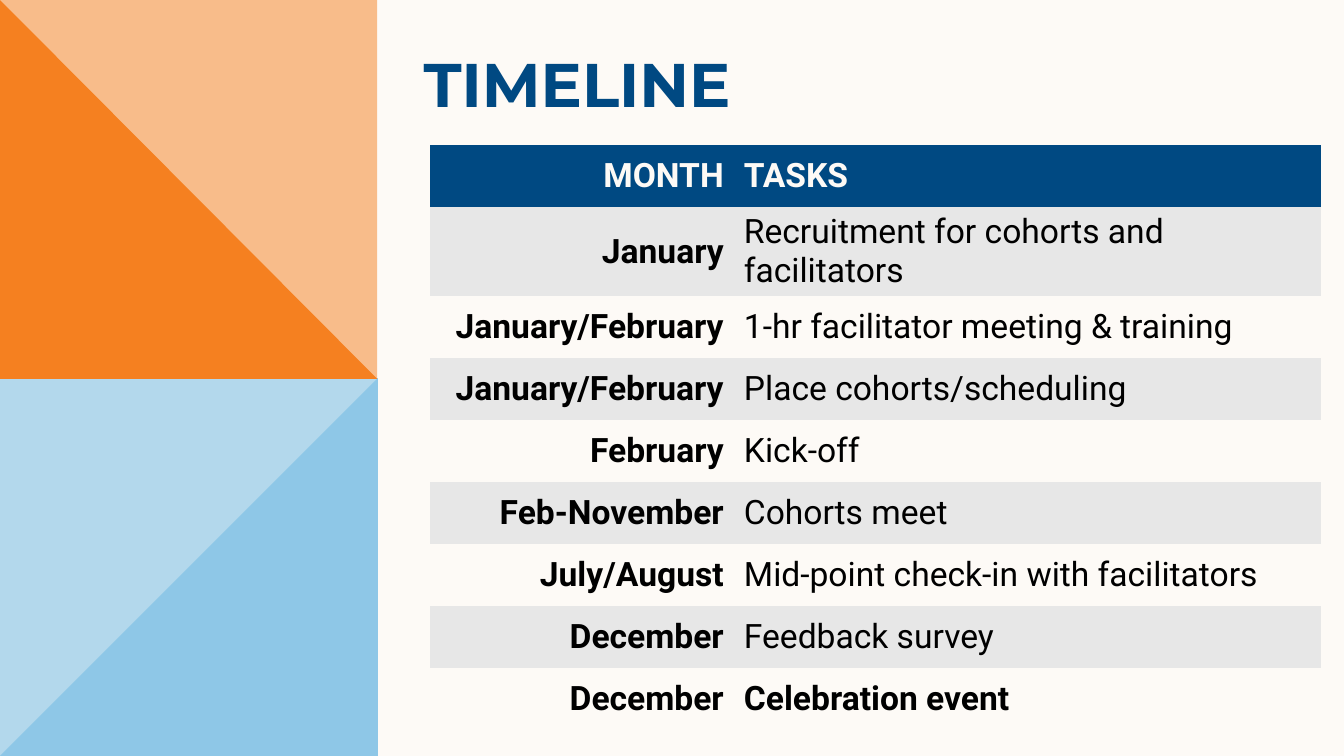
"""Build the programme timeline slide with its triangle side panel and task table."""
import dataclasses

import pptx
import pptx.dml.color
import pptx.enum.text
import pptx.oxml
import pptx.oxml.ns
import pptx.util

Pt = pptx.util.Pt
ALIGN = pptx.enum.text.PP_ALIGN
MIDDLE = pptx.enum.text.MSO_ANCHOR.MIDDLE


@dataclasses.dataclass(frozen=True)
class Theme:
    cream: str = "FDFAF6"
    navy: str = "004982"
    orange: str = "F58020"
    sky: str = "6BB8E3"
    band: str = "E7E7E7"
    black: str = "000000"
    title_font: str = "Montserrat"
    body_font: str = "Roboto"
    title_size: float = 44
    body_size: float = 24


class TimelineSlide:
    def __init__(self, deck, theme):
        self.theme = theme
        self.slide = deck.slides.add_slide(deck.slide_layouts[5])
        self.paint(self.slide.background.fill, theme.cream)

    def paint(self, fill, color, opacity=100):
        fill.solid()
        fill.fore_color.rgb = pptx.dml.color.RGBColor.from_string(color)
        if opacity < 100:
            tint = fill._xPr.find(".//" + pptx.oxml.ns.qn("a:srgbClr"))
            tint.append(pptx.oxml.parse_xml(
                f'<a:alpha {pptx.oxml.ns.nsdecls("a")} val="{opacity * 1000}"/>'))

    def label(self, frame, text, color, align=ALIGN.LEFT, **font_format):
        paragraph = frame.paragraphs[0]
        paragraph.alignment = align
        run = paragraph.add_run()
        run.text = text
        for name, value in font_format.items():
            setattr(run.font, name, value)
        run.font.color.rgb = pptx.dml.color.RGBColor.from_string(color)

    def title(self, text, left, top, width, height):
        heading = self.slide.shapes.title
        placement = {"left": left, "top": top, "width": width, "height": height}
        for name, value in placement.items():
            setattr(heading, name, Pt(value))
        frame = heading.text_frame
        frame_format = {"vertical_anchor": MIDDLE, "word_wrap": True,
                        "auto_size": pptx.enum.text.MSO_AUTO_SIZE.NONE}
        for name, value in frame_format.items():
            setattr(frame, name, value)
        self.label(frame, text, self.theme.navy, bold=True,
                   name=self.theme.title_font, size=Pt(self.theme.title_size))

    def polygon(self, corners, color, opacity=100):
        start, *others = [(Pt(x), Pt(y)) for x, y in corners]
        builder = self.slide.shapes.build_freeform(*start)
        builder.add_line_segments(others, close=True)
        panel = builder.convert_to_shape()
        panel.shadow.inherit = False
        panel.line.fill.background()
        self.paint(panel.fill, color, opacity)

    def cell(self, cell, text, fill, color, align, bold):
        properties = cell._tc.get_or_add_tcPr()
        for side in ("lnL", "lnR", "lnT", "lnB"):
            properties.append(pptx.oxml.parse_xml(
                f'<a:{side} {pptx.oxml.ns.nsdecls("a")} w="0"><a:noFill/></a:{side}>'))
        self.paint(cell.fill, fill)
        cell.vertical_anchor = MIDDLE
        self.label(cell.text_frame, text, color, align, bold=bold,
                   name=self.theme.body_font, size=Pt(self.theme.body_size))

    def schedule(self, entries, left, top, widths, heights):
        theme = self.theme
        table = self.slide.shapes.add_table(
            len(entries), len(widths), Pt(left), Pt(top),
            Pt(sum(widths)), Pt(sum(heights))).table
        table.first_row = table.horz_banding = False
        for column, width in zip(table.columns, widths):
            column.width = Pt(width)
        for index, (month, task) in enumerate(entries):
            table.rows[index].height = Pt(heights[index])
            header = index == 0
            fill = theme.navy if header else theme.band if index % 2 else theme.cream
            color = theme.cream if header else theme.black
            emphasis = header or index == len(entries) - 1
            self.cell(table.cell(index, 0), month, fill, color, ALIGN.RIGHT, True)
            self.cell(table.cell(index, 1), task, fill, color, ALIGN.LEFT, emphasis)


ENTRIES = [
    ("MONTH", "TASKS"),
    ("January", "Recruitment for cohorts and facilitators"),
    ("January/February", "1-hr facilitator meeting & training"),
    ("January/February", "Place cohorts/scheduling"),
    ("February", "Kick-off"),
    ("Feb-November", "Cohorts meet"),
    ("July/August", "Mid-point check-in with facilitators"),
    ("December", "Feedback survey"),
    ("December", "Celebration event"),
]


def main():
    deck = pptx.Presentation()
    deck.slide_width, deck.slide_height = Pt(960), Pt(540)
    theme = Theme()
    timeline = TimelineSlide(deck, theme)

    side, middle, bottom = 270, 270, 540
    upper_right, upper_bottom = 269.4, 270.6
    timeline.polygon([(0, middle), (side, middle), (side, bottom), (0, bottom)],
                     theme.sky, 50)
    timeline.polygon([(side, middle), (side, bottom), (0, bottom)], theme.sky, 50)
    timeline.polygon([(0, 0), (upper_right, 0), (upper_right, upper_bottom),
                      (0, upper_bottom)], theme.orange, 50)
    timeline.polygon([(0, 0), (upper_right, upper_bottom), (0, upper_bottom)],
                     theme.orange)

    timeline.title("TIMELINE", 295.4, 28.8, 636.5, 60.5)
    row_height, wrapped_height = 44.25, 63.6
    heights = [row_height] * len(ENTRIES)
    heights[1] = wrapped_height
    timeline.schedule(ENTRIES, 307.4, 103.6, (216.8, 419.4), heights)
    deck.save("out.pptx")


if __name__ == "__main__":
    main()
